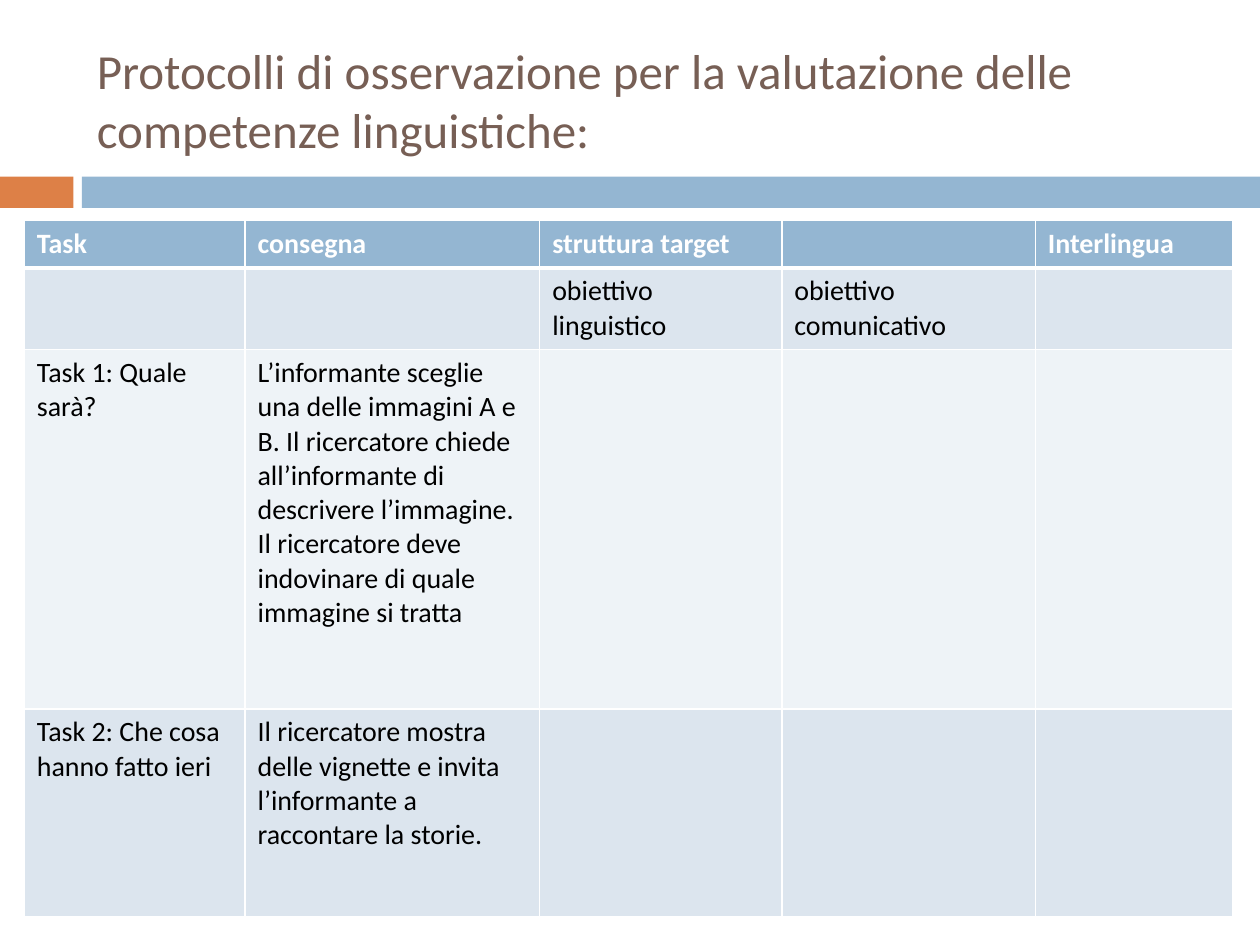
from lxml import etree
from pptx import Presentation
from pptx.dml.color import RGBColor
from pptx.enum import shapes, text
from pptx.oxml import ns
from pptx.util import Cm, Pt

BROWN = RGBColor(0x77, 0x5F, 0x55)
ORANGE = RGBColor(0xDD, 0x80, 0x47)
BLUE = RGBColor(0x94, 0xB6, 0xD2)
BAND_DARK = RGBColor(0xDC, 0xE5, 0xEE)
BAND_LIGHT = RGBColor(0xEE, 0xF3, 0xF7)
WHITE = RGBColor(0xFF, 0xFF, 0xFF)
BLACK = RGBColor(0, 0, 0)
FONT = "Calibri"


def add_run(paragraph, words, size, color, bold=False):
    run = paragraph.add_run()
    run.text = words
    run.font.name = FONT
    run.font.size = Pt(size)
    run.font.bold = bold
    run.font.color.rgb = color


def set_borders(cell, widths):
    properties = cell._tc.get_or_add_tcPr()
    for position, (side, width) in enumerate(widths.items()):
        line = etree.Element(ns.qn(f"a:{side}"), w=str(Pt(width)))
        fill = etree.SubElement(line, ns.qn("a:solidFill"))
        etree.SubElement(fill, ns.qn("a:srgbClr"), val=str(WHITE))
        properties.insert(position, line)


presentation = Presentation()
presentation.slide_width = Cm(25.4)
presentation.slide_height = Cm(19.05)
slide = presentation.slides.add_slide(presentation.slide_layouts[5])

# Title
title = slide.shapes.title
title.left, title.top, title.width, title.height = Cm(1.7), Cm(0.64), Cm(22.65), Cm(2.74)
frame = title.text_frame
frame.word_wrap = True
frame.auto_size = text.MSO_AUTO_SIZE.NONE
frame.vertical_anchor = text.MSO_ANCHOR.MIDDLE
paragraph = frame.paragraphs[0]
paragraph.alignment = text.PP_ALIGN.LEFT
add_run(paragraph,
        "Protocolli di osservazione per la valutazione delle competenze linguistiche:",
        28, BROWN)

# Two-colour bar under the title
for left, width, color in [(0, 1.48, ORANGE), (1.65, 23.75, BLUE)]:
    bar = slide.shapes.add_shape(shapes.MSO_SHAPE.RECTANGLE,
                                 Cm(left), Cm(3.56), Cm(width), Cm(0.63))
    bar.shadow.inherit = False
    bar.fill.solid()
    bar.fill.fore_color.rgb = color
    bar.line.fill.background()

# Task table
rows = [
    ["Task", "consegna", "struttura target", "", "Interlingua"],
    ["", "", "obiettivo linguistico", "obiettivo comunicativo", ""],
    ["Task 1: Quale sarà?",
     "L’informante sceglie una delle immagini A e B. Il ricercatore chiede "
     "all’informante di descrivere l’immagine. Il ricercatore deve indovinare "
     "di quale immagine si tratta", "", "", ""],
    ["Task 2: Che cosa hanno fatto ieri",
     "Il ricercatore mostra delle vignette e invita l’informante a "
     "raccontare la storie.", "", "", ""],
]
column_widths = [4.45, 5.94, 4.88, 5.11, 3.98]
row_heights = [0.95, 1.65, 7.24, 4.2]
row_fills = [BLUE, BAND_DARK, BAND_LIGHT, BAND_DARK]

table = slide.shapes.add_table(len(rows), len(column_widths), Cm(0.49), Cm(4.45),
                               Cm(sum(column_widths)), Cm(sum(row_heights))).table
for column, width in zip(table.columns, column_widths):
    column.width = Cm(width)

for index, (row, height) in enumerate(zip(table.rows, row_heights)):
    row.height = Cm(height)
    header = index == 0
    borders = {"lnL": 1, "lnR": 1, "lnT": 3 if index == 1 else 1, "lnB": 3 if header else 1}
    for cell, words in zip(row.cells, rows[index]):
        cell.fill.solid()
        cell.fill.fore_color.rgb = row_fills[index]
        set_borders(cell, borders)
        paragraph = cell.text_frame.paragraphs[0]
        if words:
            add_run(paragraph, words, 16, WHITE if header else BLACK, header)
        else:
            # Empty cells keep the table's text size so rows do not grow
            end = etree.SubElement(paragraph._p, ns.qn("a:endParaRPr"))
            end.set("sz", "1600")

presentation.save("out.pptx")
